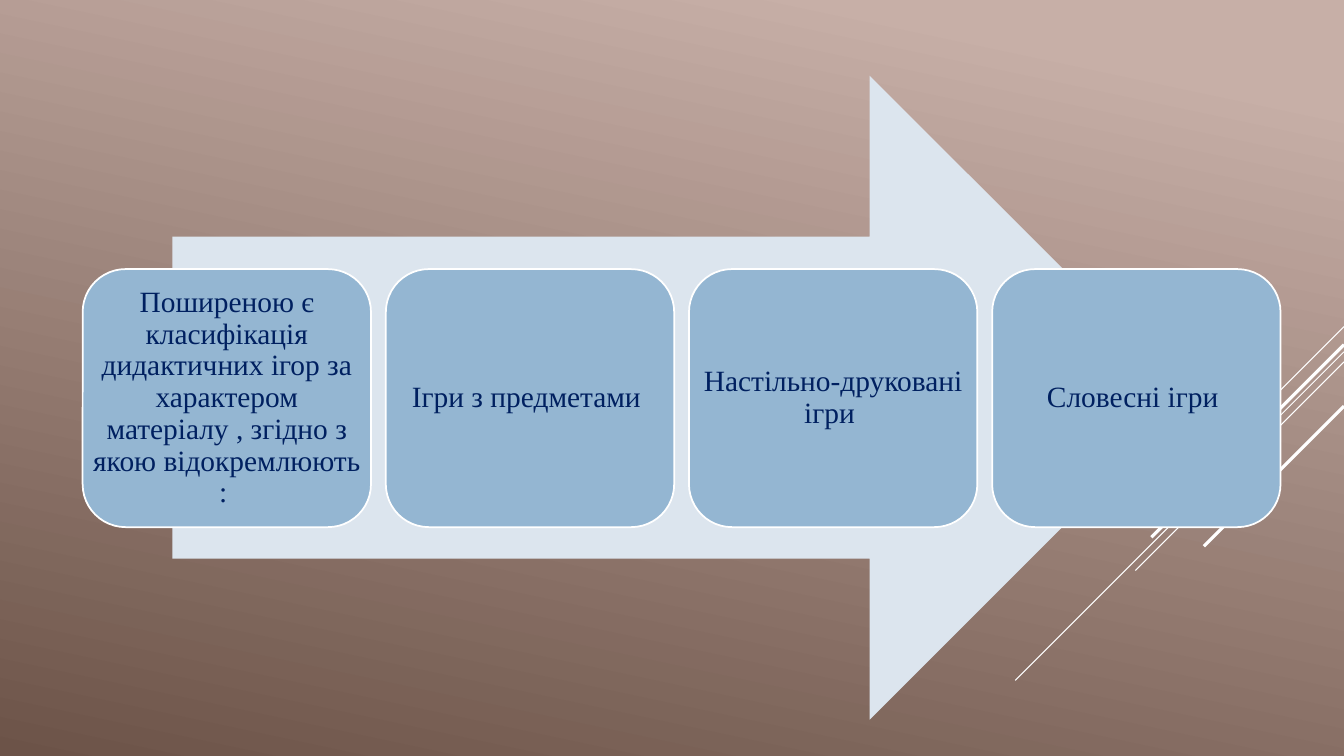
from pptx import Presentation
from pptx.dml.color import RGBColor
from pptx.enum.shapes import MSO_CONNECTOR, MSO_SHAPE
from pptx.enum.text import MSO_ANCHOR, PP_ALIGN
from pptx.oxml.ns import qn
from pptx.util import Inches, Pt
from lxml import etree

ARROW = MSO_SHAPE.RIGHT_ARROW
CARD = MSO_SHAPE.ROUNDED_RECTANGLE
STRAIGHT = MSO_CONNECTOR.STRAIGHT
MIDDLE = MSO_ANCHOR.MIDDLE
CENTER = PP_ALIGN.CENTER


def color(hex_value):
    return RGBColor.from_string(hex_value)


class GamesSlide:
    font = "Times New Roman"
    text_size = 21
    text_color = "002060"
    white = "FFFFFF"

    def __init__(self, slide):
        self.slide = slide

    def background(self, stops, angle):
        fill = self.slide.background.fill
        fill.gradient()
        fill.gradient_angle = angle
        for stop, (position, shade) in zip(fill.gradient_stops, stops):
            stop.position = position
            stop.color.rgb = color(shade)

    def ray(self, start, end, width):
        ray = self.slide.shapes.add_connector(
            STRAIGHT, *(Inches(v) for v in start + end))
        ray.line.color.rgb = color(self.white)
        ray.line.width = Pt(width)
        etree.SubElement(ray._element.spPr, qn("a:effectLst"))

    def shape(self, kind, box, fill, outline=None):
        shape = self.slide.shapes.add_shape(kind, *(Inches(v) for v in box))
        shape.shadow.inherit = False
        shape.fill.solid()
        shape.fill.fore_color.rgb = color(fill)
        if outline:
            shape.line.color.rgb = color(self.white)
            shape.line.width = Pt(outline)
        else:
            shape.line.fill.background()

    def label(self, text, box):
        frame = self.slide.shapes.add_textbox(*(Inches(v) for v in box)).text_frame
        frame.word_wrap = True
        frame.vertical_anchor = MIDDLE
        frame.margin_left = frame.margin_right = Inches(0.09)
        frame.margin_top = frame.margin_bottom = Inches(0.09)
        paragraph = frame.paragraphs[0]
        paragraph.text = text
        paragraph.alignment = CENTER
        paragraph.line_spacing = 0.9
        paragraph.font.name = self.font
        paragraph.font.size = Pt(self.text_size)
        paragraph.font.color.rgb = color(self.text_color)


def main():
    prs = Presentation()
    prs.slide_width, prs.slide_height = Inches(13.33), Inches(7.5)
    games = GamesSlide(prs.slides.add_slide(prs.slide_layouts[6]))

    # Background; the angle runs counter-clockwise
    games.background([(0.1, "C7AFA7"), (1, "6C5348")], 258)

    # Diagonal rays from the right edge: top, horizontal run, width
    for top, run, width in [(3.24, 1, 0.75), (3.49, 3.26, 0.75),
                            (3.59, 2.07, 0.75), (3.42, 1.91, 2.25),
                            (4.03, 1.39, 2.25)]:
        games.ray((13.33, top), (13.33 - run, top + run), width)

    # Arrow behind the cards
    games.shape(ARROW, (1.71, 0.75, 10.11, 6.39), "DCE5EE")

    # Row of cards
    kinds_of_games = [
        "Поширеною є класифікація дидактичних ігор за характером матеріалу , "
        "згідно з якою відокремлюють : ",
        "Ігри з предметами ",
        "Настільно-друковані ігри ",
        "Словесні ігри ",
    ]
    card_left, card_step = 0.82, 3.007
    for i, kind in enumerate(kinds_of_games):
        card = (card_left + i * card_step, 2.67, 2.86, 2.56)
        games.shape(CARD, card, "94B6D2", 1.25)
        games.label(kind, card)

    prs.save("out.pptx")


if __name__ == "__main__":
    main()
